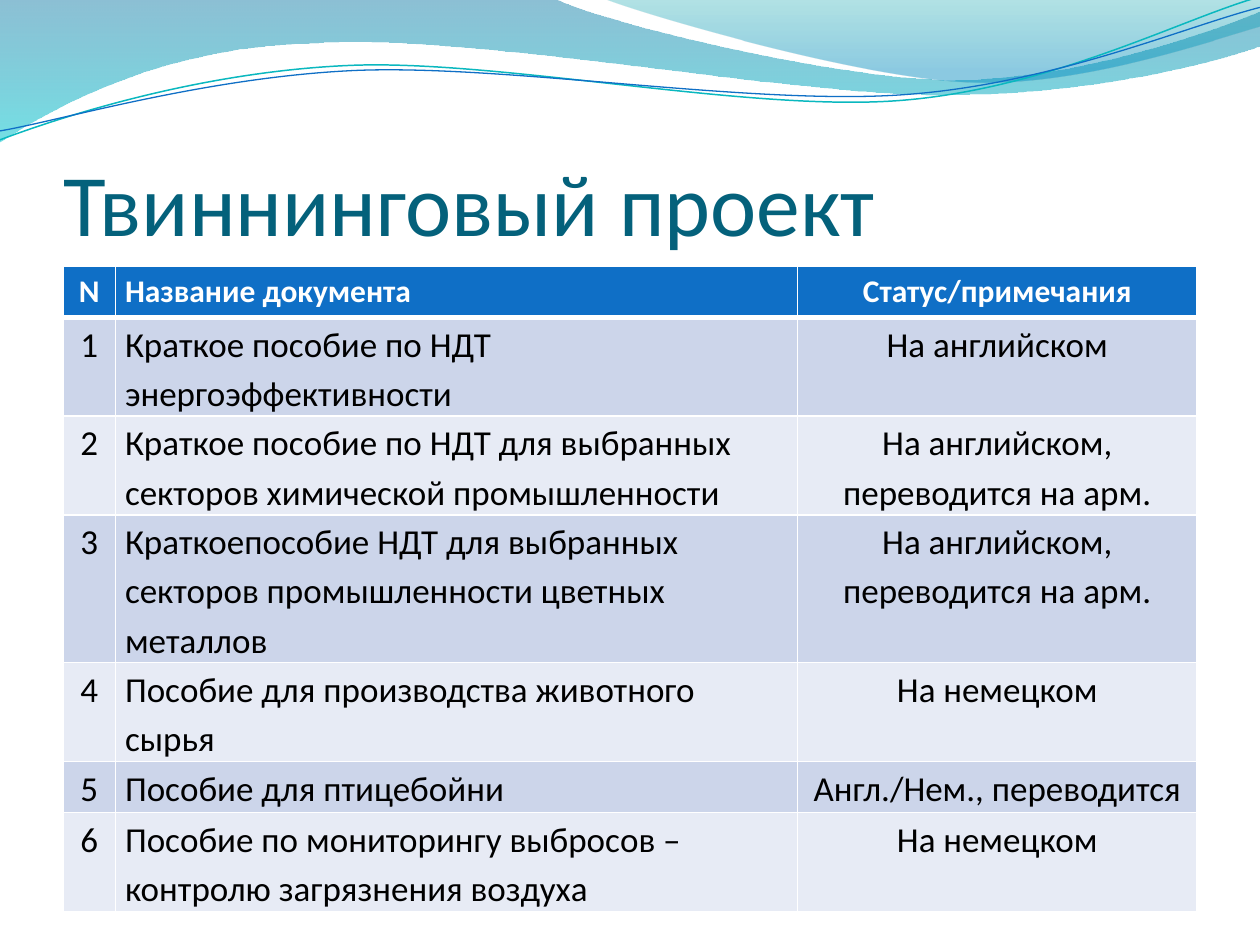
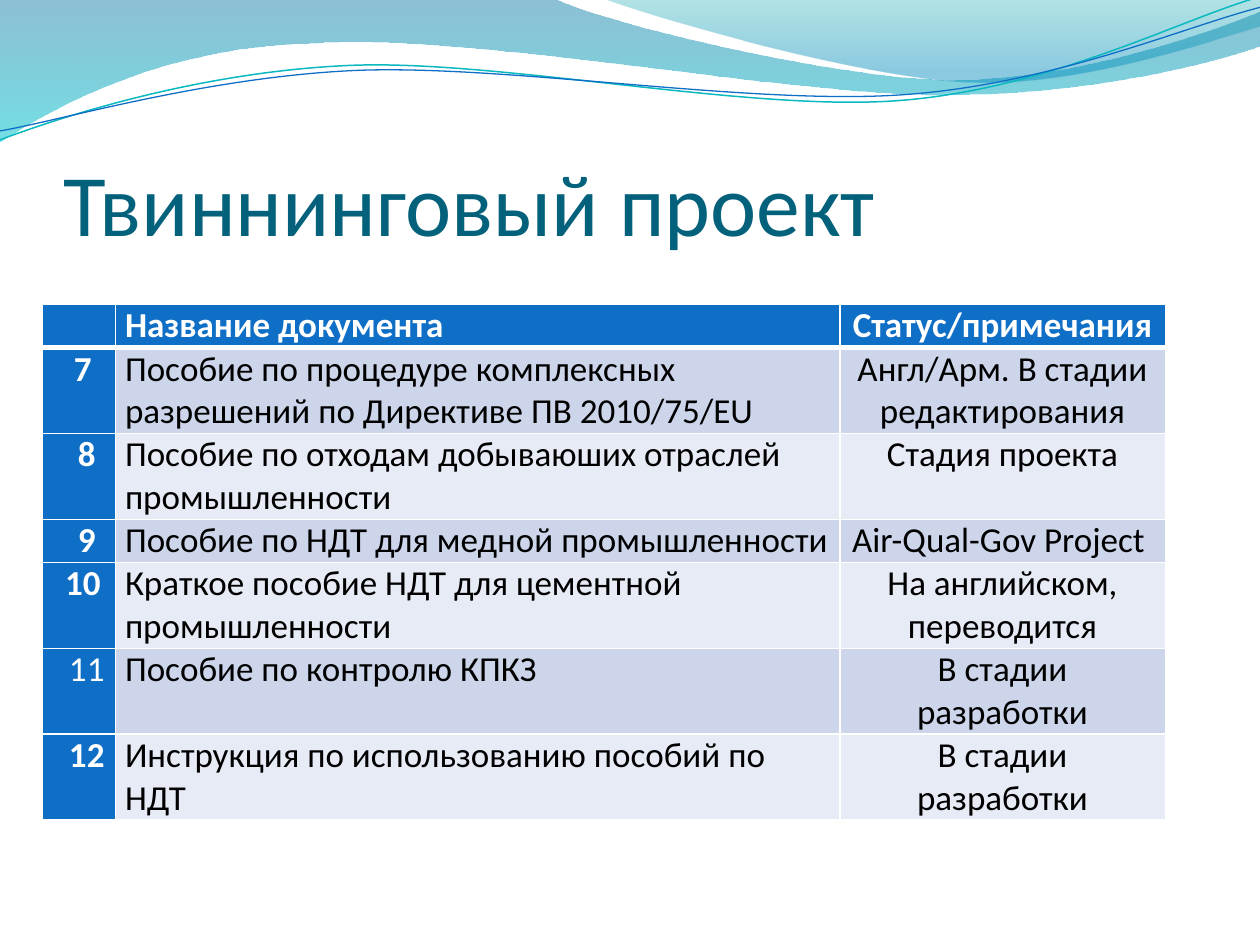
from lxml import etree
from pptx import Presentation
from pptx.dml.color import RGBColor
from pptx.enum.text import MSO_ANCHOR, PP_ALIGN
from pptx.oxml.ns import qn
from pptx.util import Cm, Pt

LEFT, CENTER = PP_ALIGN.LEFT, PP_ALIGN.CENTER
BOTTOM = MSO_ANCHOR.BOTTOM

WHITE = RGBColor(0xFF, 0xFF, 0xFF)
BLACK = RGBColor(0x00, 0x00, 0x00)
TITLE_TEAL = RGBColor(0x04, 0x61, 0x7B)
HEADER_BLUE = RGBColor(0x0F, 0x6F, 0xC6)
LINE_TEAL = RGBColor(0x0A, 0xB8, 0xBF)
ROW_DARK = RGBColor(0xCC, 0xD5, 0xEA)
ROW_LIGHT = RGBColor(0xE7, 0xEB, 0xF5)
BAND_TOP = RGBColor(0x00, 0x74, 0xA1)
BAND_BOTTOM = RGBColor(0x00, 0xC6, 0xCF)
CREST_TOP = RGBColor(0x00, 0xA1, 0xA9)
CREST_BOTTOM = RGBColor(0x00, 0x8B, 0xBF)

FONT = "Calibri"
TITLE = "Твиннинговый проект"

# Outlines in centimetres: a pair of numbers is a corner,
# three points are the two handles and the end of a Bézier curve.
BAND = [
    (0, 0), (11.18, -0.03),
    ((12.09, 0.43), (16.87, 1.6), (19.25, 1.6)),
    ((21.67, 1.6), (24.33, 0.66), (25.4, 0.23)),
    (25.43, 0.91),
    ((24.97, 1.12), (22.1, 1.93), (18.95, 1.91)),
    ((15.8, 1.91), (9.7, 0.71), (6.53, 0.86)),
    ((3.28, 0.91), (1.17, 2.11), (-0.03, 2.87)),
    (0, 0),
]
CREST = [
    (12.17, -0.03),
    ((12.93, 0.28), (17.32, 1.57), (19.53, 1.65)),
    ((21.74, 1.75), (24.41, 0.81), (25.4, 0.53)),
    (25.4, 0), (12.17, -0.03),
]
TEAL_WAVE = [
    (0, 2.82),
    ((1.22, 2.36), (4.01, 1.45), (7.04, 1.32)),
    ((10.03, 1.19), (15.06, 2.26), (18.11, 2.03)),
    ((21.16, 1.8), (23.83, 0.38), (25.35, -0.05)),
]
BLUE_WAVE = [
    (0, 2.64),
    ((1.19, 2.44), (4.17, 1.55), (7.19, 1.42)),
    ((10.24, 1.3), (15.16, 2.13), (18.21, 1.91)),
    ((21.23, 1.7), (23.9, 0.53), (25.4, 0.15)),
]

GUIDES_1_TO_6 = [
    ("N", "Название документа", "Статус/примечания"),
    ("1", "Краткое пособие по НДТ энергоэффективности", "На английском"),
    ("2", "Краткое пособие по НДТ для выбранных секторов химической промышленности",
     "На английском, переводится на арм."),
    ("3", "Краткоепособие НДТ для выбранных секторов промышленности цветных металлов",
     "На английском, переводится на арм."),
    ("4", "Пособие для производства животного сырья", "На немецком"),
    ("5", "Пособие для птицебойни", "Англ./Нем., переводится"),
    ("6", "Пособие по мониторингу выбросов – контролю загрязнения воздуха",
     "На немецком"),
]
GUIDES_7_TO_12 = [
    ("", "Название документа", "Статус/примечания"),
    ("7", "Пособие по процедуре комплексных разрешений по Директиве ПВ 2010/75/EU",
     "Англ/Арм. В стадии редактирования"),
    (" 8", "Пособие по отходам добываюших отраслей промышленности", "Стадия проекта"),
    (" 9", "Пособие по НДТ для медной промышленности", "Air-Qual-Gov Project "),
    ("10", "Краткое пособие НДТ для цементной промышленности",
     "На английском, переводится"),
    (" 11", "Пособие по контролю КПКЗ", "В стадии разработки"),
    (" 12", "Инструкция по использованию пособий по НДТ", "В стадии разработки"),
]
NOT_BOLD = {" 11"}


def bend_curves(shape, outline):
    """Join the three straight segments of each curve into one Bézier segment."""
    path = next(shape.element.spPr.iter(qn("a:path")))
    segments = iter(path.findall(qn("a:lnTo")))
    for step in outline[1:]:
        segment = next(segments)
        if len(step) == 2:
            continue
        curve = etree.Element(qn("a:cubicBezTo"))
        segment.addprevious(curve)
        for part in (segment, next(segments), next(segments)):
            curve.append(part[0])
            path.remove(part)


def set_borders(cell, top, bottom):
    """Draw white cell borders; top and bottom are widths in points."""
    properties = cell._tc.get_or_add_tcPr()
    for side, width in (("L", 1), ("R", 1), ("T", top), ("B", bottom)):
        line = etree.SubElement(properties, qn(f"a:ln{side}"), w=str(Pt(width)))
        fill = etree.SubElement(line, qn("a:solidFill"))
        etree.SubElement(fill, qn("a:srgbClr"), val=str(WHITE))


class Deck:
    """Holds the shared style and the slide being built."""

    def __init__(self):
        self.presentation = Presentation()
        self.presentation.slide_width = Cm(25.4)
        self.presentation.slide_height = Cm(19.05)
        self.slide = None

    def add_slide(self, title):
        layout = self.presentation.slide_layouts[6]
        self.slide = self.presentation.slides.add_slide(layout)
        self.add_band(BAND, (0, BAND_TOP, 45), (1, BAND_BOTTOM, 55))
        self.add_band(CREST, (0, CREST_TOP, 30), (0.8, CREST_BOTTOM, 45))
        self.add_wave(TEAL_WAVE, LINE_TEAL, 0.85)
        self.add_wave(BLUE_WAVE, HEADER_BLUE, 0.75)
        self.add_title(title)

    def add_outline(self, outline, close):
        points = []
        for step in outline:
            points.extend([step] if len(step) == 2 else step)
        start, *others = [(Cm(x), Cm(y)) for x, y in points]
        builder = self.slide.shapes.build_freeform(*start)
        builder.add_line_segments(others, close=close)
        shape = builder.convert_to_shape()
        bend_curves(shape, outline)
        shape.shadow.inherit = False
        return shape

    def add_band(self, outline, *stops):
        """Add a top-down gradient; a stop is position, colour, opacity in percent."""
        shape = self.add_outline(outline, close=True)
        shape.line.fill.background()
        shape.fill.gradient()
        shape.fill.gradient_angle = 270
        for stop, (position, color, _) in zip(shape.fill.gradient_stops, stops):
            stop.position = position
            stop.color.rgb = color
        colors = shape.element.spPr.iter(qn("a:srgbClr"))
        for color, (_, _, opacity) in zip(colors, stops):
            etree.SubElement(color, qn("a:alpha"), val=str(opacity * 1000))

    def add_wave(self, outline, color, width):
        shape = self.add_outline(outline, close=False)
        shape.fill.background()
        shape.line.color.rgb = color
        shape.line.width = Pt(width)

    def add_run(self, paragraph, text, size, color, bold=False):
        run = paragraph.add_run()
        run.text = text
        run.font.name = FONT
        run.font.size = Pt(size)
        run.font.bold = bold
        run.font.color.rgb = color

    def add_title(self, text):
        box = self.slide.shapes.add_textbox(Cm(1.28), Cm(1.96), Cm(22.86), Cm(3.17))
        frame = box.text_frame
        frame.word_wrap = True
        frame.vertical_anchor = BOTTOM
        frame.margin_left = frame.margin_right = frame.margin_bottom = 0
        frame.margin_top = Cm(0.13)
        self.add_run(frame.paragraphs[0], text, 50, TITLE_TEAL)

    def add_table(self, rows, left, top, widths, heights, header_size,
                  line_spacing=1.0, blue_numbers=False):
        frame = self.slide.shapes.add_table(
            len(rows), len(widths), Cm(left), Cm(top),
            Cm(sum(widths)), Cm(sum(heights)))
        table = frame.table
        table.first_col = blue_numbers
        for column, width in zip(table.columns, widths):
            column.width = Cm(width)
        for row_index, row in enumerate(rows):
            table.rows[row_index].height = Cm(heights[row_index])
            for column_index, text in enumerate(row):
                cell = table.cell(row_index, column_index)
                is_header = row_index == 0
                is_number = blue_numbers and column_index == 0
                is_blue = is_header or is_number
                set_borders(cell, top=3 if row_index == 1 else 1,
                            bottom=3 if is_header else 1)
                cell.fill.solid()
                band = ROW_DARK if row_index % 2 else ROW_LIGHT
                cell.fill.fore_color.rgb = HEADER_BLUE if is_blue else band
                cell.margin_left = cell.margin_right = Cm(0.19)
                cell.margin_top = cell.margin_bottom = 0
                paragraph = cell.text_frame.paragraphs[0]
                paragraph.alignment = LEFT if column_index == 1 else CENTER
                paragraph.line_spacing = line_spacing
                if is_number:
                    paragraph._p.get_or_add_pPr().set("marL", str(Cm(0.16)))
                if text:
                    self.add_run(paragraph, text, header_size if is_header else 20,
                                 WHITE if is_blue else BLACK,
                                 is_blue and text not in NOT_BOLD)

    def save(self):
        self.presentation.save("out.pptx")


def main():
    deck = Deck()
    deck.add_slide(TITLE)
    deck.add_table(GUIDES_1_TO_6, 1.27, 5.37, (1.06, 13.75, 8.05),
                   (1.03, 1.99, 1.99, 2.98, 1.99, 1.03, 1.99),
                   header_size=18, line_spacing=1.15)
    deck.add_slide(TITLE)
    deck.add_table(GUIDES_7_TO_12, 0.85, 6.14, (1.48, 14.6, 6.56),
                   (0.87, 1.73, 1.73, 0.87, 1.73, 1.73, 1.73),
                   header_size=20, blue_numbers=True)
    deck.save()


if __name__ == "__main__":
    main()
